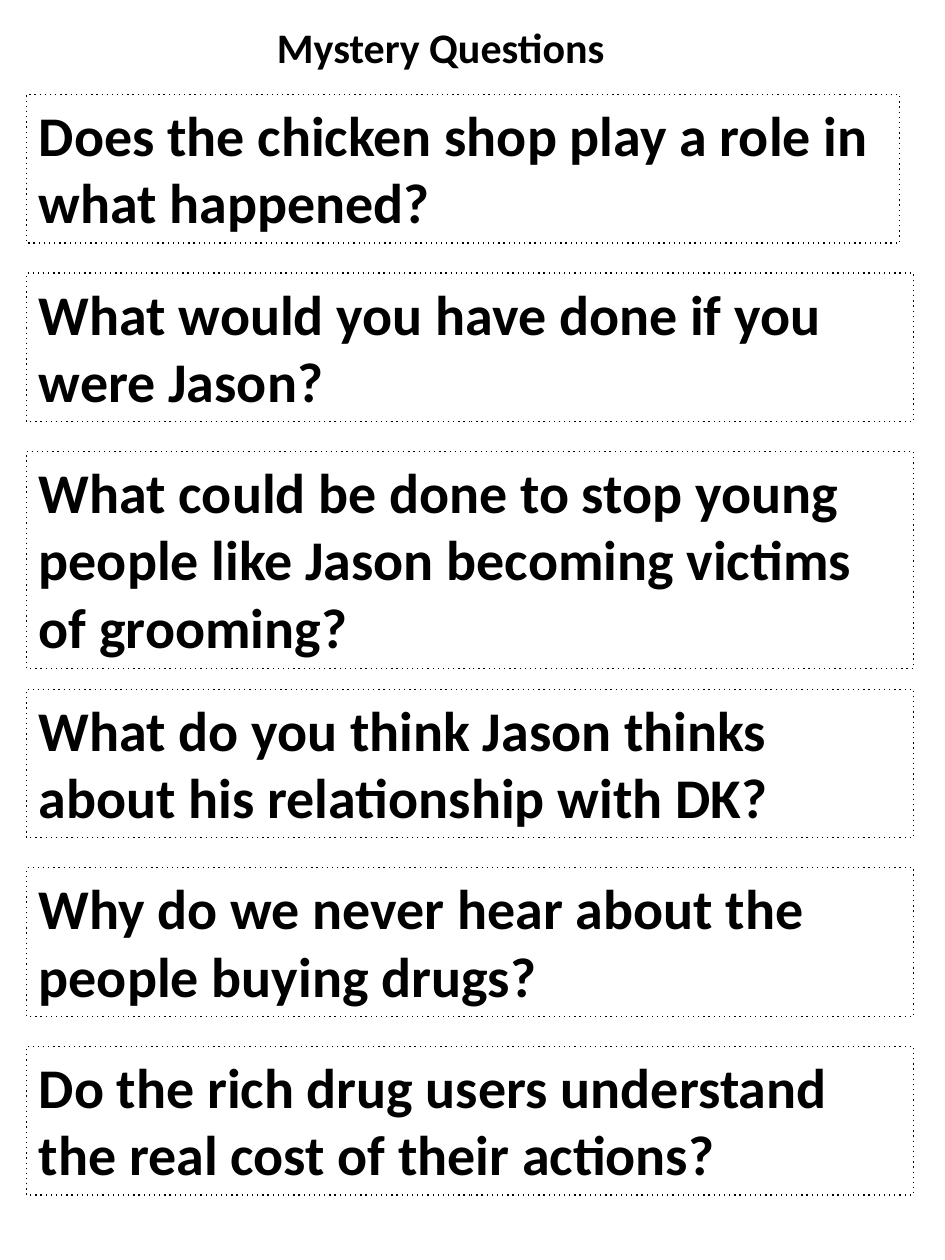
import pptx
import pptx.util
import pptx.dml.color
import pptx.enum.dml
import pptx.enum.text
import pptx.oxml.ns

COLORS = {"ink": "000000", "paper": "FFFFFF"}
FONT = "Calibri"
PAGE_W, PAGE_H = 7.5, 10

# Two groups of three cards share one row pitch
LEFT, CARD_W, PITCH = 0.21, 7.04, 1.417
GROUP_TOPS = (0.75, 5.47)
FIRST_W = 6.93
LINE_H, PADDING = 0.54, 0.1

# Each question with its number of text lines
QUESTIONS = [
    ("Does the chicken shop play a role in what happened?", 2),
    ("What would you have done if you were Jason?", 2),
    ("What could be done to stop young people like Jason becoming victims of grooming?", 3),
    ("What do you think Jason thinks about his relationship with DK?", 2),
    ("Why do we never hear about the people buying drugs?", 2),
    ("Do the rich drug users understand the real cost of their actions?", 2),
]


def color(name):
    return pptx.dml.color.RGBColor.from_string(COLORS[name])


def add_text(slide, box, text, size, wrap=True):
    sp = slide.shapes.add_textbox(*(pptx.util.Inches(v) for v in box))
    tf = sp.text_frame
    tf.word_wrap = wrap
    tf.auto_size = pptx.enum.text.MSO_AUTO_SIZE.SHAPE_TO_FIT_TEXT
    r = tf.paragraphs[0].add_run()
    r.text = text
    r.font.name = FONT
    r.font.size = pptx.util.Pt(size)
    r.font.bold = True
    r.font.color.rgb = color("ink")
    return sp


def add_card(slide, box, text):
    sp = add_text(slide, box, text, 32)
    sp.line.color.rgb = color("ink")
    sp.line.width = pptx.util.Pt(0.75)
    sp.line.dash_style = pptx.enum.dml.MSO_LINE.ROUND_DOT
    # Widely spaced dots have no member in MSO_LINE
    dash = next(sp._element.iter(pptx.oxml.ns.qn("a:prstDash")))
    dash.set("val", "dot")


def main():
    prs = pptx.Presentation()
    prs.slide_width = pptx.util.Inches(PAGE_W)
    prs.slide_height = pptx.util.Inches(PAGE_H)
    slide = prs.slides.add_slide(prs.slide_layouts[6])
    slide.background.fill.solid()
    slide.background.fill.fore_color.rgb = color("paper")

    # Heading
    add_text(slide, (2.1, 0.12, 2.84, 0.5), "Mystery Questions", 24, wrap=False)

    # Question cards
    for i, (text, lines) in enumerate(QUESTIONS):
        group, row = divmod(i, 3)
        top = GROUP_TOPS[group] + row * PITCH
        width = FIRST_W if i == 0 else CARD_W
        add_card(slide, (LEFT, top, width, lines * LINE_H + PADDING), text)

    prs.save("out.pptx")


if __name__ == "__main__":
    main()
